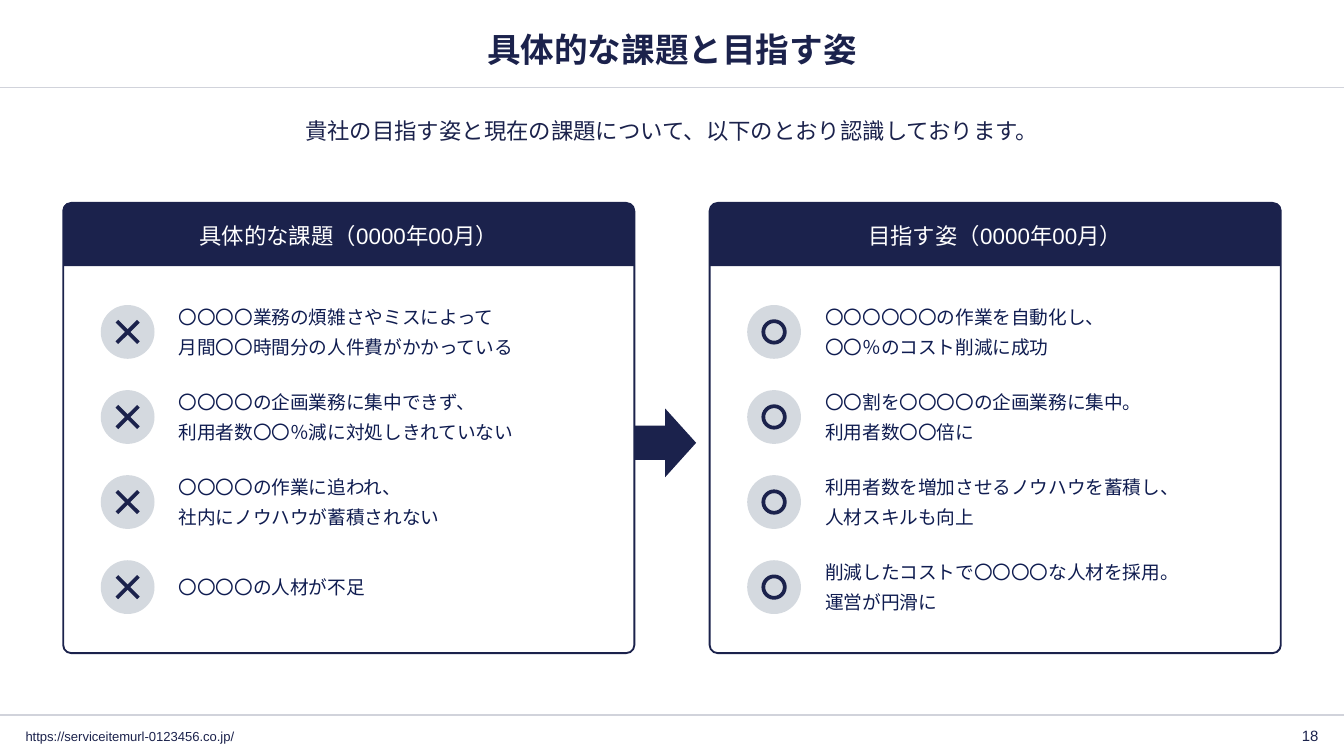
import pptx
import pptx.dml.color
import pptx.enum.shapes
import pptx.enum.text
import pptx.oxml.ns
import pptx.util
from lxml import etree

SHAPE = pptx.enum.shapes.MSO_SHAPE
ALIGN = pptx.enum.text.PP_ALIGN
ANCHOR = pptx.enum.text.MSO_ANCHOR

NAVY, TEXT, GREY, RULE, WHITE = "1B224C", "0F1C50", "D4D9DF", "D1D3DB", "FFFFFF"
WIDTH, HEIGHT = 10, 5.625

TITLE = "具体的な課題と目指す姿"
LEAD = "貴社の目指す姿と現在の課題について、以下のとおり認識しております。"
ADDRESS = "https://serviceitemurl-0123456.co.jp/"
PAGE_NUMBER = "18"
PANELS = [
    ("具体的な課題（0000年00月）", "cross", [
        ["〇〇〇〇業務の煩雑さやミスによって", "月間〇〇時間分の人件費がかかっている"],
        ["〇〇〇〇の企画業務に集中できず、", "利用者数〇〇％減に対処しきれていない"],
        ["〇〇〇〇の作業に追われ、", "社内にノウハウが蓄積されない"],
        ["〇〇〇〇の人材が不足"],
    ]),
    ("目指す姿（0000年00月）", "ring", [
        ["〇〇〇〇〇〇の作業を自動化し、", "〇〇％のコスト削減に成功"],
        ["〇〇割を〇〇〇〇の企画業務に集中。", "利用者数〇〇倍に"],
        ["利用者数を増加させるノウハウを蓄積し、", "人材スキルも向上"],
        ["削減したコストで〇〇〇〇な人材を採用。", "運営が円滑に"],
    ]),
]

MARGIN = 0.47
PANEL_TOP, PANEL_WIDTH, PANEL_HEIGHT, HEADER_HEIGHT = 1.51, 4.25, 3.35, 0.47
PANEL_STEP = WIDTH - 2 * MARGIN - PANEL_WIDTH
FIRST_ROW_CENTRE, ROW_STEP, ROW_HEIGHT = 2.47, 0.633, 0.47
ICON_OFFSET, ICON_SIZE, MARK_SIZE = 0.48, 0.4, 0.16
TEXT_OFFSET, TEXT_WIDTH = 0.82, 3.15

presentation = pptx.Presentation()
presentation.slide_width = pptx.util.Inches(WIDTH)
presentation.slide_height = pptx.util.Inches(HEIGHT)
slide = presentation.slides.add_slide(presentation.slide_layouts[6])


def colour(value):
    return pptx.dml.color.RGBColor.from_string(value)


def inches(*values):
    return [pptx.util.Inches(value) for value in values]


def write(shape, lines, size, value, align=ALIGN.LEFT, bold=False, anchor=ANCHOR.MIDDLE):
    frame = shape.text_frame
    frame.word_wrap = True
    frame.vertical_anchor = anchor
    frame.margin_left = frame.margin_right = pptx.util.Inches(0.04)
    frame.margin_top = frame.margin_bottom = pptx.util.Inches(0.04)
    for index, line in enumerate(lines):
        paragraph = frame.add_paragraph() if index else frame.paragraphs[0]
        paragraph.alignment = align
        if index:
            paragraph.space_before = pptx.util.Pt(4)
        run = paragraph.add_run()
        run.text = line
        run.font.name = "Arial"
        run.font.size = pptx.util.Pt(size)
        run.font.bold = bold
        run.font.color.rgb = colour(value)


def add_text(box, lines, size, value, **options):
    write(slide.shapes.add_textbox(*inches(*box)), lines, size, value, **options)


def add_shape(parent, kind, box, fill=None, line_width=None, adjustments=()):
    shape = parent.add_shape(kind, *inches(*box))
    shape.shadow.inherit = False
    for index, adjustment in enumerate(adjustments):
        shape.adjustments[index] = adjustment
    if fill:
        shape.fill.solid()
        shape.fill.fore_color.rgb = colour(fill)
    else:
        shape.fill.background()
    if line_width:
        shape.line.color.rgb = colour(NAVY)
        shape.line.width = pptx.util.Pt(line_width)
    else:
        shape.line.fill.background()
    return shape


def add_line(parent, start, end, value, width):
    line = parent.add_connector(
        pptx.enum.shapes.MSO_CONNECTOR.STRAIGHT, *inches(*start, *end))
    line.line.color.rgb = colour(value)
    line.line.width = pptx.util.Pt(width)
    etree.SubElement(line._element.spPr, pptx.oxml.ns.qn("a:effectLst"))


def centred(x, y, size):
    return x - size / 2, y - size / 2, size, size


def add_icon(mark, x, y):
    icon = slide.shapes.add_group_shape().shapes
    add_shape(icon, SHAPE.OVAL, centred(x, y, ICON_SIZE), fill=GREY)
    if mark == "ring":
        add_shape(icon, SHAPE.OVAL, centred(x, y, MARK_SIZE), line_width=2)
        return
    half = MARK_SIZE / 2
    for side in (half, -half):
        add_line(icon, (x - side, y - half), (x + side, y + half), NAVY, 2)


def add_panel(left, heading, mark, rows):
    add_shape(slide.shapes, SHAPE.ROUNDED_RECTANGLE,
              (left, PANEL_TOP, PANEL_WIDTH, PANEL_HEIGHT),
              line_width=1, adjustments=[0.018])
    header = add_shape(slide.shapes, SHAPE.ROUND_2_SAME_RECTANGLE,
                       (left, PANEL_TOP, PANEL_WIDTH, HEADER_HEIGHT),
                       fill=NAVY, adjustments=[0.105, 0])
    write(header, [heading], 12, WHITE, align=ALIGN.CENTER)
    for index, lines in enumerate(rows):
        centre = FIRST_ROW_CENTRE + index * ROW_STEP
        add_text((left + TEXT_OFFSET, centre - ROW_HEIGHT / 2, TEXT_WIDTH, ROW_HEIGHT),
                 lines, 10, TEXT)
        add_icon(mark, left + ICON_OFFSET, centre)


for y in (0.65, 5.32):
    add_line(slide.shapes, (0, y), (WIDTH, y), RULE, 0.75)
content_width = WIDTH - 2 * MARGIN
add_text((MARGIN, 0.17, content_width, 0.39), [TITLE], 18, NAVY,
         align=ALIGN.CENTER, bold=True)
add_text((MARGIN, 0.83, content_width, 0.51), [LEAD], 12, NAVY,
         align=ALIGN.CENTER, anchor=ANCHOR.TOP)
add_text((0.15, 5.38, 3.54, 0.2), [ADDRESS], 7, NAVY)
add_text((9.46, 5.37, 0.39, 0.2), [PAGE_NUMBER], 8, NAVY, align=ALIGN.RIGHT)

for column, (heading, mark, rows) in enumerate(PANELS):
    add_panel(MARGIN + column * PANEL_STEP, heading, mark, rows)
add_shape(slide.shapes, SHAPE.RIGHT_ARROW, (MARGIN + PANEL_WIDTH, 3.04, 0.46, 0.51),
          fill=NAVY, adjustments=[0.5, 0.5])

presentation.save("out.pptx")
